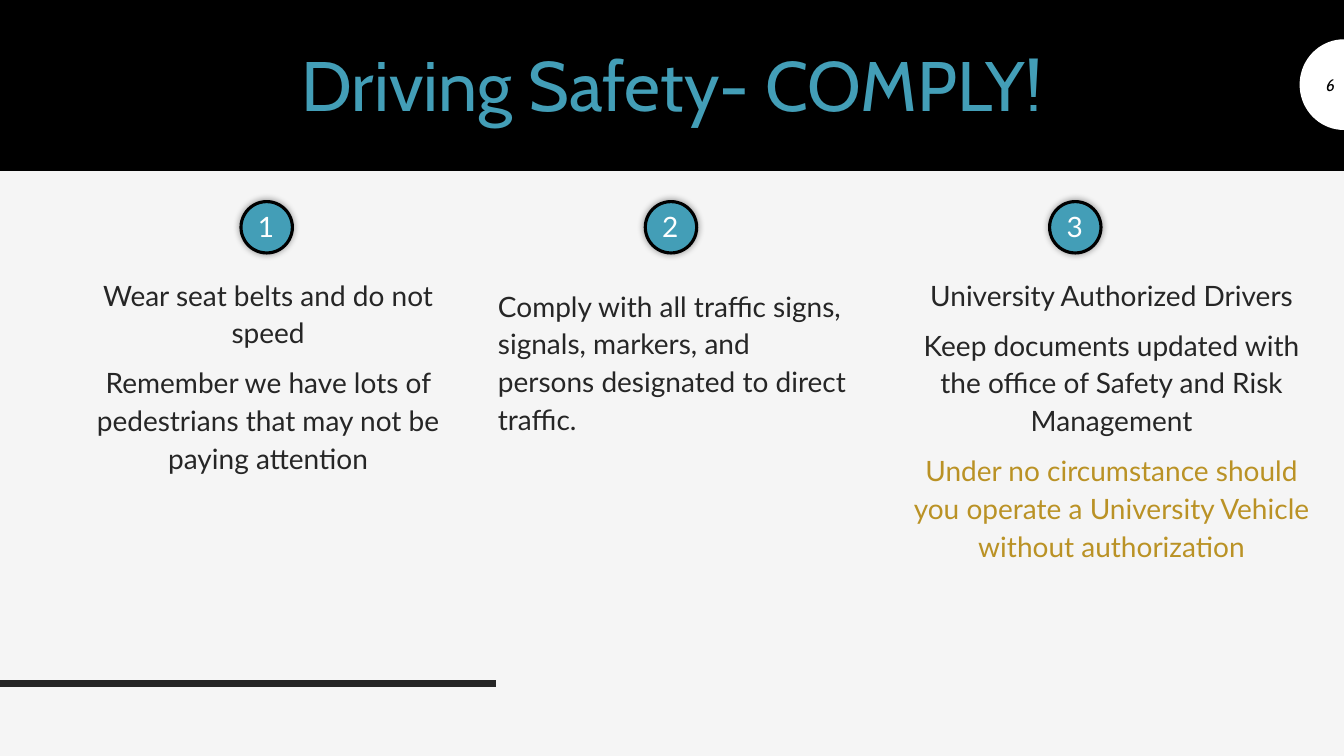
from math import cos, pi, sin

from lxml import etree
from pptx import Presentation
from pptx.dml.color import RGBColor
from pptx.enum.shapes import MSO_CONNECTOR as Line, MSO_SHAPE as Shape
from pptx.enum.text import MSO_ANCHOR as Anchor, PP_ALIGN as Align
from pptx.oxml.ns import qn
from pptx.util import Inches, Pt

DARK, BLACK, WHITE = "262626", "000000", "FFFFFF"
TEAL, GOLD = "439EB7", "BA9225"


def color(code):
    return RGBColor.from_string(code)


def write(box, lines, size, font, align=Align.LEFT, anchor=Anchor.TOP,
          space=None, gap=None):
    """Add a text box; lines is a list of (text, colour) paragraphs."""
    frame = slide.shapes.add_textbox(*map(Inches, box)).text_frame
    frame.word_wrap = True
    frame.vertical_anchor = anchor
    frame.text = "\n".join(text for text, _ in lines)
    for par, (_, code) in zip(frame.paragraphs, lines):
        par.alignment = align
        par.line_spacing = space
        par.space_before = gap
        face = par.runs[0].font
        face.name, face.size = font, Pt(size)
        face.color.rgb = color(code)
    return frame


deck = Presentation()
deck.slide_width, deck.slide_height = Inches(13.33), Inches(7.5)
slide = deck.slides.add_slide(deck.slide_layouts[6])
slide.background.fill.solid()
slide.background.fill.fore_color.rgb = color("F5F5F5")

# Footer rule
rule = slide.shapes.add_connector(
    Line.STRAIGHT, 0, Inches(6.78), Inches(4.92), Inches(6.78))
rule.line.color.rgb = color(DARK)
rule.line.width = Pt(4.5)
etree.SubElement(rule.element.spPr, qn("a:effectLst"))

# Title band
band = slide.shapes.add_shape(Shape.RECTANGLE, 0, 0, Inches(13.33), Inches(1.69))
band.shadow.inherit = False
band.fill.solid()
band.fill.fore_color.rgb = color(BLACK)
band.line.color.rgb = color(BLACK)
band.line.width = Pt(1)

# Half disc behind the page number
steps = 36
arc = [(13.33 - 0.44 * sin(pi * i / steps), 0.84 - 0.45 * cos(pi * i / steps))
       for i in range(steps + 1)]
points = [(Inches(x), Inches(y)) for x, y in arc]
path = slide.shapes.build_freeform(*points[0])
path.add_line_segments(points[1:], close=True)
disc = path.convert_to_shape()
disc.shadow.inherit = False
disc.fill.solid()
disc.fill.fore_color.rgb = color(WHITE)
disc.line.fill.background()

write((0.83, 0.33, 11.67, 1.1), [("Driving Safety- COMPLY!", TEAL)], 50, "Cabin",
      Align.CENTER, Anchor.MIDDLE, 0.9)

# Three numbered columns
columns = [
    ((0.83, 2.67, 3.66, 2.51), Align.CENTER, [
        ("Wear seat belts and do not speed", DARK),
        ("Remember we have lots of pedestrians that may not be paying attention",
         DARK)]),
    ((4.84, 2.78, 3.66, 1.38), Align.LEFT, [
        ("Comply with all traffic signs, signals, markers, and persons "
         "designated to direct traffic.", DARK)]),
    ((8.84, 2.67, 4.37, 3.19), Align.CENTER, [
        ("University Authorized Drivers", DARK),
        ("Keep documents updated with the office of Safety and Risk Management",
         DARK),
        ("Under no circumstance should you operate a University Vehicle "
         "without authorization", GOLD)]),
]
for i, (box, align, lines) in enumerate(columns):
    left = 2.39 + 4.01 * i
    dot = slide.shapes.add_shape(
        Shape.OVAL, Inches(left), Inches(2), Inches(0.51), Inches(0.51))
    dot.fill.solid()
    dot.fill.fore_color.rgb = color(TEAL)
    dot.line.color.rgb = color(BLACK)
    dot.line.width = Pt(2.25)
    dot.shadow.inherit = False
    glow = etree.SubElement(
        dot.element.spPr.find(qn("a:effectLst")), qn("a:outerShdw"),
        blurRad=str(Pt(5)), dist="0", dir="0", algn="ctr", rotWithShape="0")
    tint = etree.SubElement(glow, qn("a:srgbClr"), val=BLACK)
    etree.SubElement(tint, qn("a:alpha"), val="40000")
    write((left + 0.07, 2.03, 0.36, 0.44), [(str(i + 1), WHITE)], 20, "Lato")
    write(box, lines, 20, "Lato", align, space=1.12, gap=Pt(9))

page = write((12.89, 0.64, 0.45, 0.4), [("6", BLACK)], 12, "Cabin",
             Align.RIGHT, Anchor.MIDDLE)
page.paragraphs[0].runs[0].font.italic = True

deck.save("out.pptx")
